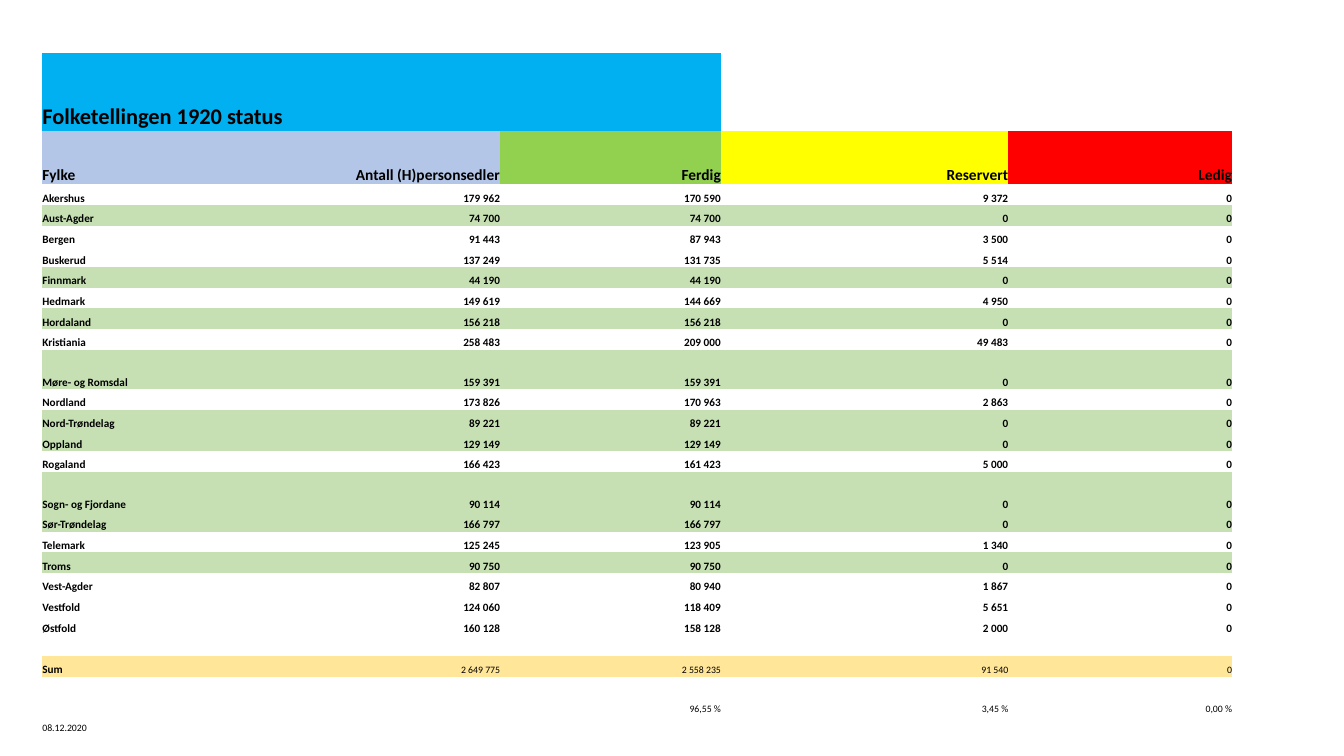
"""Builds the status slide for the 1920 census as one table."""
from dataclasses import dataclass
from typing import Optional

from lxml import etree
from pptx import Presentation
from pptx import util as u
from pptx.dml import color
from pptx.enum import text
from pptx.oxml import ns


@dataclass(frozen=True)
class Theme:
    font: str = "Calibri"
    ink: str = "000000"
    title_fill: str = "00B0F0"
    header_fills: tuple = ("B4C6E7", "B4C6E7", "92D050", "FFFF00", "FF0000")
    complete_fill: str = "C6E0B4"
    sum_fill: str = "FFE699"
    title_size: int = 16
    header_size: int = 11
    body_size: int = 8
    small_size: int = 7


@dataclass(frozen=True)
class County:
    name: str
    total: int
    reserved: int = 0
    tall: bool = False


@dataclass(frozen=True)
class Row:
    texts: tuple = ("",) * 5
    fills: tuple = (None,) * 5
    sizes: tuple = (7,) * 5
    bold: tuple = (False,) * 5
    height: Optional[float] = None


THEME = Theme()
COLUMN_WIDTHS = (1.85, 2.69, 2.19, 2.85, 2.22)
LEFT, TOP, HEIGHT = 0.42, 0.53, 6.76
TITLE_HEIGHT, HEADER_HEIGHT, TALL_HEIGHT, FOOT_HEIGHT = 0.77, 0.53, 0.39, 0.19
NO_STYLE = "{2D5ABB26-0587-4C30-8999-92F81FD0307C}"

COUNTIES = (
    County("Akershus", 179962, 9372),
    County("Aust-Agder", 74700),
    County("Bergen", 91443, 3500),
    County("Buskerud", 137249, 5514),
    County("Finnmark", 44190),
    County("Hedmark", 149619, 4950),
    County("Hordaland", 156218),
    County("Kristiania", 258483, 49483),
    County("Møre- og Romsdal", 159391, tall=True),
    County("Nordland", 173826, 2863),
    County("Nord-Trøndelag", 89221),
    County("Oppland", 129149),
    County("Rogaland", 166423, 5000),
    County("Sogn- og Fjordane", 90114, tall=True),
    County("Sør-Trøndelag", 166797),
    County("Telemark", 125245, 1340),
    County("Troms", 90750),
    County("Vest-Agder", 82807, 1867),
    County("Vestfold", 124060, 5651),
    County("Østfold", 160128, 2000),
)


def count_texts(name: str, total: int, reserved: int) -> tuple:
    """Return a name and its total, finished, reserved and free counts."""
    counts = (total, total - reserved, reserved, 0)
    return (name, *(f"{count:,}".replace(",", " ") for count in counts))


def percent(part: int, total: int) -> str:
    """Return a share with a decimal comma."""
    return f"{100 * part / total:.2f} %".replace(".", ",")


def county_row(county: County) -> Row:
    """Return the row of one county, shaded when nothing is reserved."""
    fill = None if county.reserved else THEME.complete_fill
    return Row(count_texts(county.name, county.total, county.reserved), (fill,) * 5,
               (THEME.body_size,) * 5, (True,) * 5, TALL_HEIGHT if county.tall else None)


def table_rows() -> list[Row]:
    """Return every row from the title down to the date."""
    total = sum(county.total for county in COUNTIES)
    reserved = sum(county.reserved for county in COUNTIES)
    shares = tuple(percent(part, total) for part in (total - reserved, reserved, 0))
    return [
        Row(("Folketellingen 1920 status", "", "", "", ""),
            (THEME.title_fill,) * 3 + (None,) * 2,
            (THEME.title_size,) * 5, (True,) * 5, TITLE_HEIGHT),
        Row(("Fylke", "Antall (H)personsedler", "Ferdig", "Reservert", "Ledig"),
            THEME.header_fills, (THEME.header_size,) * 5, (True,) * 5, HEADER_HEIGHT),
        *(county_row(county) for county in COUNTIES),
        Row(),
        Row(count_texts("Sum", total, reserved), (THEME.sum_fill,) * 5,
            (THEME.body_size,) + (THEME.small_size,) * 4, (True,) + (False,) * 4),
        Row(height=FOOT_HEIGHT),
        Row(("", "", *shares), height=FOOT_HEIGHT),
        Row(("08.12.2020", "", "", "", ""), height=FOOT_HEIGHT),
    ]


def fill_cell(cell, row: Row, column: int) -> None:
    """Write and format one table cell."""
    cell.margin_left = cell.margin_right = cell.margin_top = cell.margin_bottom = 0
    cell.vertical_anchor = text.MSO_ANCHOR.BOTTOM
    if row.fills[column]:
        cell.fill.solid()
        cell.fill.fore_color.rgb = color.RGBColor.from_string(row.fills[column])
    else:
        cell.fill.background()
    paragraph = cell.text_frame.paragraphs[0]
    paragraph.alignment = text.PP_ALIGN.RIGHT if column else text.PP_ALIGN.LEFT
    paragraph.font.name = THEME.font
    paragraph.font.size = u.Pt(row.sizes[column])
    paragraph.font.bold = row.bold[column]
    paragraph.font.color.rgb = color.RGBColor.from_string(THEME.ink)
    if row.texts[column]:
        paragraph.add_run().text = row.texts[column]
    else:
        etree.SubElement(paragraph._p, ns.qn("a:endParaRPr"), sz=str(row.sizes[column] * 100))


def add_status_table(slide, rows: list[Row]) -> None:
    """Place the table and share the remaining height among the plain rows."""
    fixed = [row.height for row in rows if row.height is not None]
    plain_height = (HEIGHT - sum(fixed)) / (len(rows) - len(fixed))
    frame = slide.shapes.add_table(len(rows), len(COLUMN_WIDTHS), u.Inches(LEFT), u.Inches(TOP),
                                   u.Inches(sum(COLUMN_WIDTHS)), u.Inches(HEIGHT))
    table = frame.table
    table.first_row = table.horz_banding = False
    table._tbl.tblPr.find(ns.qn("a:tableStyleId")).text = NO_STYLE
    for column, width in zip(table.columns, COLUMN_WIDTHS):
        column.width = u.Inches(width)
    for index, row in enumerate(rows):
        table.rows[index].height = u.Inches(row.height or plain_height)
        for column in range(len(COLUMN_WIDTHS)):
            fill_cell(table.cell(index, column), row, column)
    table.cell(0, 0).merge(table.cell(0, 1))


def main() -> None:
    """Build and save the presentation."""
    presentation = Presentation()
    presentation.slide_width = u.Inches(13.33)
    presentation.slide_height = u.Inches(7.5)
    slide = presentation.slides.add_slide(presentation.slide_layouts[6])
    add_status_table(slide, table_rows())
    presentation.save("out.pptx")


if __name__ == "__main__":
    main()
